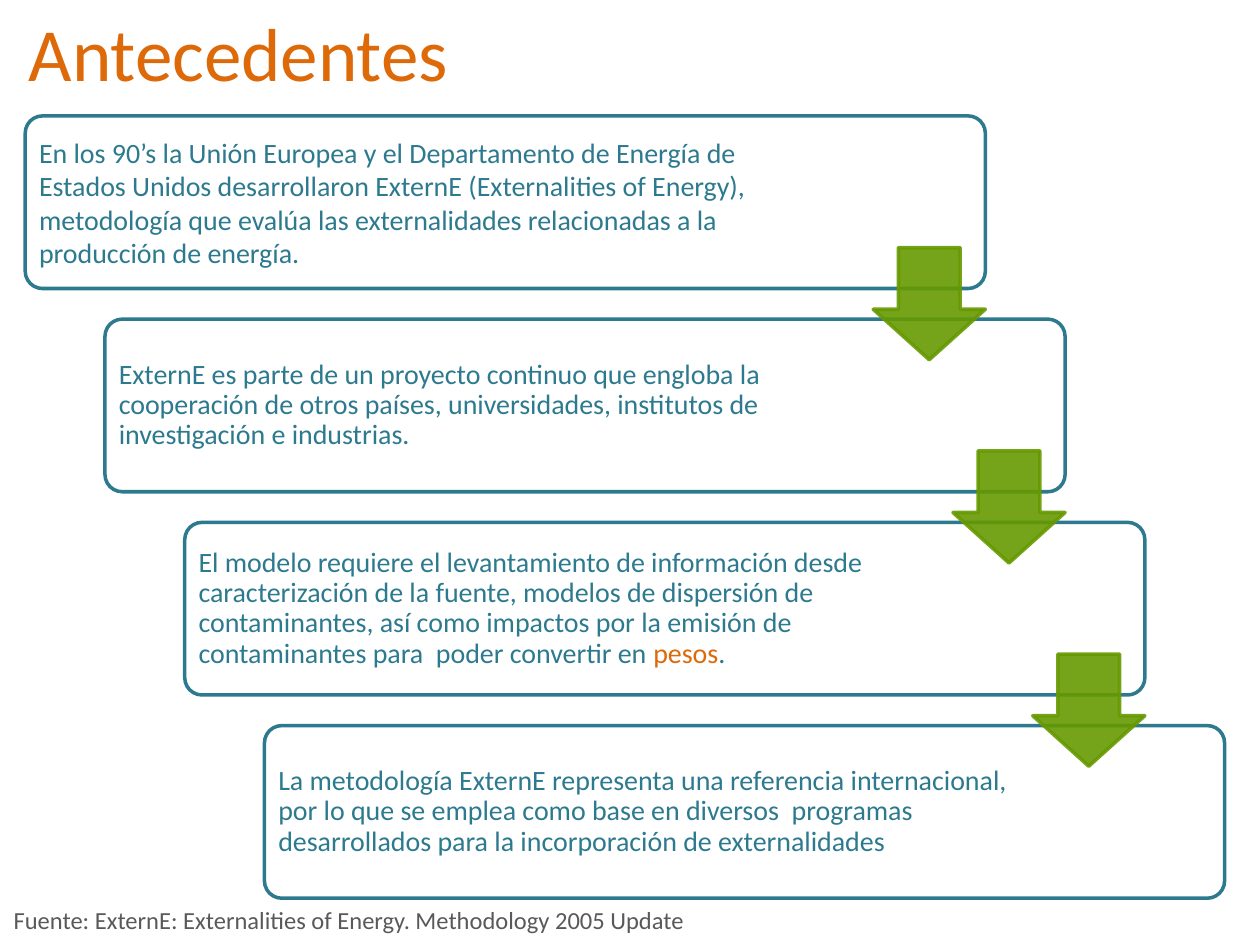
from lxml.etree import SubElement
from pptx import Presentation
from pptx.dml.color import RGBColor
from pptx.enum.shapes import MSO_SHAPE
from pptx.enum.text import MSO_ANCHOR
from pptx.oxml.ns import qn
from pptx.util import Inches, Pt

TEAL = RGBColor(0x2D, 0x7A, 0x8F)
ORANGE = RGBColor(0xDD, 0x69, 0x09)
GREEN = RGBColor(0x66, 0x99, 0x00)
GRAY = RGBColor(0x59, 0x59, 0x59)

WIDTH, HEIGHT = 10, 7.5
FIRST_LEFT, FIRST_TOP = 0.2, 0.92
STEP_RIGHT, STEP_DOWN = 0.633, 1.613
CARD_WIDTH, CARD_HEIGHT = 7.62, 1.37
ARROW_SIZE = 0.89
ARROW_DROP = 1.045
PADDING = 0.04

# Each step: line spacing and paragraphs, each made of (text, colour) runs.
STEPS = [
    (1.0, [
        [("En los 90’s la Unión Europea y el Departamento de Energía de Estados Unidos "
          "desarrollaron ExternE (Externalities of Energy),", TEAL)],
        [("metodología que evalúa las externalidades relacionadas a la producción "
          "de energía.", TEAL)],
    ]),
    (0.9, [
        [("ExternE es parte de un proyecto continuo que engloba la cooperación de otros "
          "países, universidades, institutos de investigación e industrias.", TEAL)],
    ]),
    (0.9, [
        [("El modelo requiere el levantamiento de información desde caracterización de la "
          "fuente, modelos de dispersión de contaminantes, así como impactos por la emisión "
          "de contaminantes para  poder convertir en ", TEAL),
         ("pesos", ORANGE), (".", TEAL)],
    ]),
    (0.9, [
        [("La metodología ExternE representa una referencia internacional, por lo que se "
          "emplea como base en diversos  programas desarrollados para la incorporación de "
          "externalidades", TEAL)],
    ]),
]


def set_attributes(target, values):
    for name, value in values.items():
        setattr(target, name, value)


def add_text(slide, box, paragraphs, size, spacing=1.0, **frame_format):
    frame = slide.shapes.add_textbox(*map(Inches, box)).text_frame
    set_attributes(frame, {"word_wrap": True, **frame_format})
    for index, runs in enumerate(paragraphs):
        paragraph = frame.add_paragraph() if index else frame.paragraphs[0]
        paragraph.line_spacing = spacing
        for text, color in runs:
            run = paragraph.add_run()
            run.text = text
            set_attributes(run.font, {"name": "Calibri", "size": Pt(size)})
            run.font.color.rgb = color


def add_outlined_shape(slide, kind, box, adjustments, color):
    shape = slide.shapes.add_shape(kind, *map(Inches, box))
    shape.shadow.inherit = False
    for index, value in enumerate(adjustments):
        shape.adjustments[index] = value
    shape.fill.background()
    shape.line.color.rgb = color
    shape.line.width = Pt(2)
    return shape


def add_card(slide, box, spacing, paragraphs):
    left, top, width, height = box
    add_outlined_shape(slide, MSO_SHAPE.ROUNDED_RECTANGLE, box, [0.1], TEAL)
    margins = {f"margin_{side}": Inches(0.07) for side in ("left", "top", "right", "bottom")}
    text_box = (left + PADDING, top + PADDING, width * 0.79, height - 2 * PADDING)
    add_text(slide, text_box, paragraphs, 16, spacing,
             vertical_anchor=MSO_ANCHOR.MIDDLE, **margins)


def add_arrow(slide, box):
    """Add a green down arrow, 90 % opaque in both fill and line."""
    arrow = add_outlined_shape(slide, MSO_SHAPE.DOWN_ARROW, box, [0.55, 0.45], GREEN)
    arrow.fill.solid()
    arrow.fill.fore_color.rgb = GREEN
    for color in arrow._element.spPr.iter(qn("a:srgbClr")):
        SubElement(color, qn("a:alpha"), val="90000")


def add_staircase(slide, left, top):
    corners = [(left + i * STEP_RIGHT, top + i * STEP_DOWN) for i in range(len(STEPS))]
    for (x, y), (spacing, paragraphs) in zip(corners, STEPS):
        add_card(slide, (x, y, CARD_WIDTH, CARD_HEIGHT), spacing, paragraphs)
    for x, y in corners[:-1]:
        add_arrow(slide, (x + CARD_WIDTH - ARROW_SIZE, y + ARROW_DROP, ARROW_SIZE, ARROW_SIZE))


def main():
    presentation = Presentation()
    set_attributes(presentation, {"slide_width": Inches(WIDTH), "slide_height": Inches(HEIGHT)})
    slide = presentation.slides.add_slide(presentation.slide_layouts[6])
    add_text(slide, (0, 0, WIDTH * 0.85, 1.09), [[("Antecedentes", ORANGE)]], 42.9,
             margin_left=Inches(0.23))
    add_staircase(slide, FIRST_LEFT, FIRST_TOP)
    source = "Fuente: ExternE: Externalities of Energy. Methodology 2005 Update"
    add_text(slide, (0.01, 7.13, WIDTH * 0.78, 0.34), [[(source, GRAY)]], 14)
    presentation.save("out.pptx")


if __name__ == "__main__":
    main()
